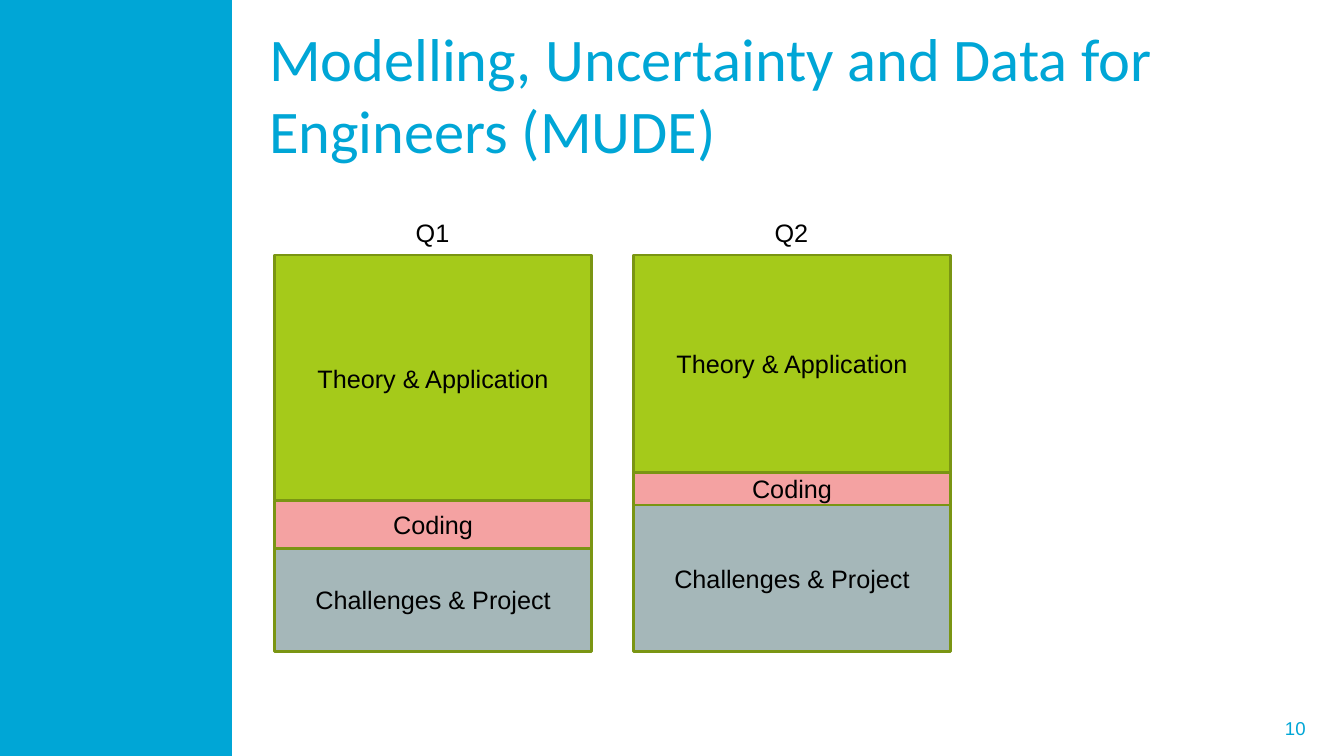
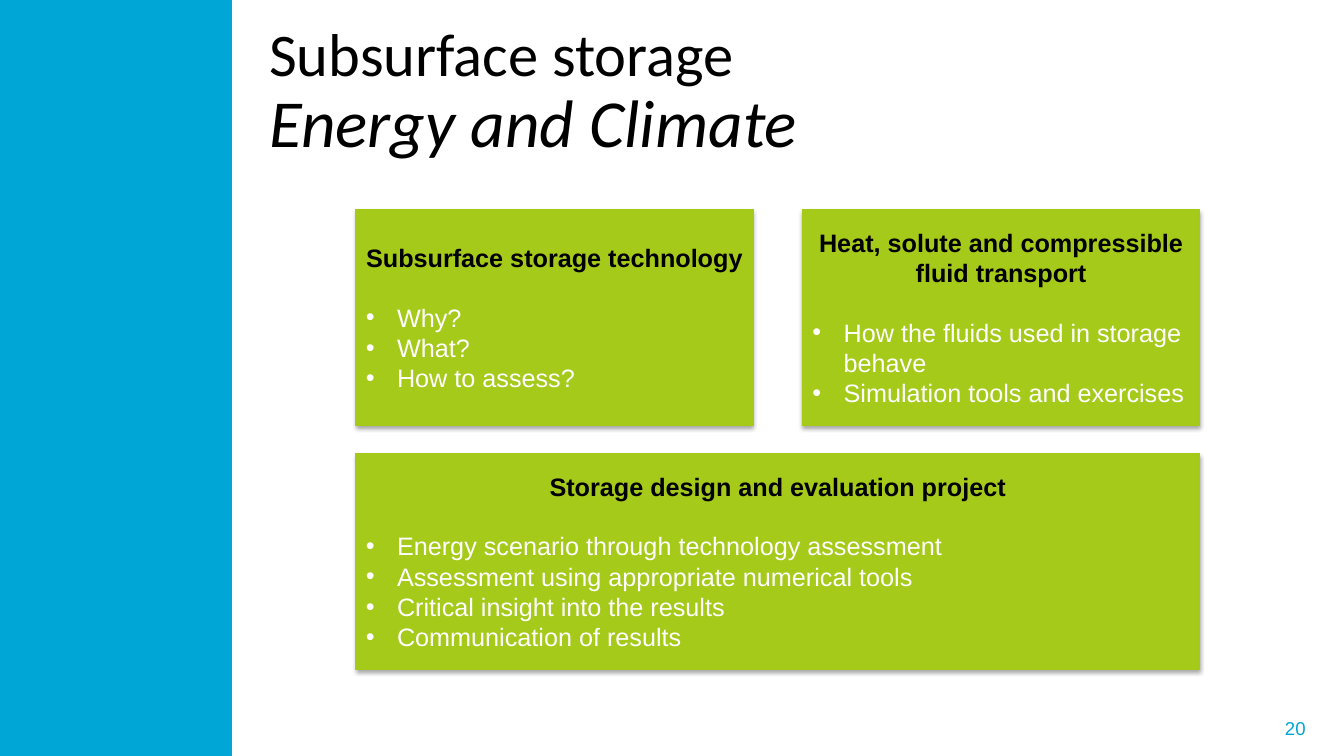
from lxml.etree import SubElement
from pptx import Presentation
from pptx.dml.color import RGBColor
from pptx.enum.shapes import MSO_SHAPE
from pptx.enum.text import MSO_ANCHOR, PP_ALIGN
from pptx.oxml.ns import qn
from pptx.util import Inches, Pt

COLORS = {
    "cyan": "00A6D6", "green": "A5CA1A", "edge": "7A9513", "card_edge": "A4CA15",
    "pink": "F4A2A2", "grey": "A5B7B9", "black": "000000", "white": "FFFFFF",
}
BODY_FONT, TITLE_FONT = "Arial", "Calibri"

PARTS = [("Theory & Application", "green"), ("Coding", "pink"),
         ("Challenges & Project", "grey")]
QUARTERS = [("Q1", (2.44, 0.47, 1.02)), ("Q2", (2.16, 0.32, 1.45))]
STACK_LEFT, STACK_TOP, STACK_W, STACK_STEP = 2.72, 2.53, 3.15, 3.56

CARD_LEFT, CARD_TOP, CARD_W, CARD_H = 3.53, 2.08, 3.94, 2.14
COL_STEP, ROW_STEP = 4.43, 2.42
CARDS = [
    (0, 0, 1, "Subsurface storage technology", ["Why?", "What?", "How to assess?"]),
    (1, 0, 1, "Heat, solute and compressible fluid transport",
     ["How the fluids used in storage behave", "Simulation tools and exercises"]),
    (0, 1, 2, "Storage design and evaluation project",
     ["Energy scenario through technology assessment",
      "Assessment using appropriate numerical tools",
      "Critical insight into the results", "Communication of results"]),
]


def rgb(name):
    return RGBColor.from_string(COLORS[name])


def style(p, size=18, color="black", font=BODY_FONT, align=PP_ALIGN.LEFT, bold=False):
    p.alignment = align
    for r in p.runs:
        r.font.name = font
        r.font.size = Pt(size)
        r.font.bold = bold
        r.font.color.rgb = rgb(color)


def add_text(s, x, y, w, h, text, wrap=True, anchor=MSO_ANCHOR.MIDDLE, **look):
    tf = s.shapes.add_textbox(Inches(x), Inches(y), Inches(w), Inches(h)).text_frame
    tf.word_wrap = wrap
    tf.vertical_anchor = anchor
    tf.text = text
    style(tf.paragraphs[0], **look)
    return tf


def add_rect(s, x, y, w, h, fill, line=None, width=0.75):
    sp = s.shapes.add_shape(MSO_SHAPE.RECTANGLE, Inches(x), Inches(y), Inches(w), Inches(h))
    sp.shadow.inherit = False
    sp.fill.solid()
    sp.fill.fore_color.rgb = rgb(fill)
    if line:
        sp.line.color.rgb = rgb(line)
        sp.line.width = Pt(width)
    else:
        sp.line.fill.background()
    sp.text_frame.word_wrap = True
    sp.text_frame.vertical_anchor = MSO_ANCHOR.MIDDLE
    return sp


def add_shadow(sp):
    effects = sp._element.spPr.find(qn("a:effectLst"))
    shadow = SubElement(effects, qn("a:outerShdw"), blurRad=str(Pt(3.1)),
                        dist=str(Pt(1.8)), dir="5400000", rotWithShape="0")
    color = SubElement(shadow, qn("a:srgbClr"), val=COLORS["black"])
    SubElement(color, qn("a:alpha"), val="35000")


def add_bullet(p):
    pPr = p._p.get_or_add_pPr()
    pPr.set("marL", str(Inches(0.31)))
    pPr.set("indent", str(-Inches(0.31)))
    SubElement(pPr, qn("a:buFont"), typeface=BODY_FONT)
    SubElement(pPr, qn("a:buChar"), char="•")


def new_slide(prs, title, number, color):
    s = prs.slides.add_slide(prs.slide_layouts[6])
    tf = add_text(s, 9.7, 7.02, 3.38, 0.4, number, size=13.3, color="cyan",
                  align=PP_ALIGN.RIGHT)
    tf.margin_left = tf.margin_right = Inches(0.13)
    tf.margin_top = tf.margin_bottom = Inches(0.07)
    add_rect(s, 0, 0, 2.3, 7.5, "cyan")
    title_tf = add_text(s, 2.57, 0.3, 10.36, 1.25, title, size=43.2, color=color,
                        font=TITLE_FONT)
    return s, title_tf.paragraphs[0]


def build_quarters(prs):
    s, _ = new_slide(prs, "Modelling, Uncertainty and Data for Engineers (MUDE)",
                     "10", "cyan")
    for i, (quarter, heights) in enumerate(QUARTERS):
        x, y = STACK_LEFT + i * STACK_STEP, STACK_TOP
        for (label, fill), h in zip(PARTS, heights):
            sp = add_rect(s, x, y, STACK_W, h, fill, "edge", 2)
            sp.text_frame.text = label
            style(sp.text_frame.paragraphs[0], align=PP_ALIGN.CENTER)
            y += h
        add_text(s, x + (STACK_W - 0.54) / 2, 2.11, 0.54, 0.4, quarter,
                 wrap=False, anchor=MSO_ANCHOR.TOP)


def build_storage(prs):
    s, title = new_slide(prs, "Subsurface storage\vEnergy and Climate", "20", "black")
    title.line_spacing = 0.9
    subtitle = title.runs[1]
    subtitle.font.size = Pt(48)
    subtitle.font.italic = True
    for col, row, span, heading, bullets in CARDS:
        sp = add_rect(s, CARD_LEFT + col * COL_STEP, CARD_TOP + row * ROW_STEP,
                      CARD_W + (span - 1) * COL_STEP, CARD_H, "green", "card_edge")
        add_shadow(sp)
        tf = sp.text_frame
        tf.text = heading
        p = tf.paragraphs[0]
        style(p, align=PP_ALIGN.CENTER, bold=True)
        p.space_after = Pt(21)
        for bullet in bullets:
            p = tf.add_paragraph()
            p.text = bullet
            add_bullet(p)
            style(p, color="white")


def main():
    prs = Presentation()
    prs.slide_width, prs.slide_height = Inches(13.33), Inches(7.5)
    build_quarters(prs)
    build_storage(prs)
    prs.save("out.pptx")


if __name__ == "__main__":
    main()
